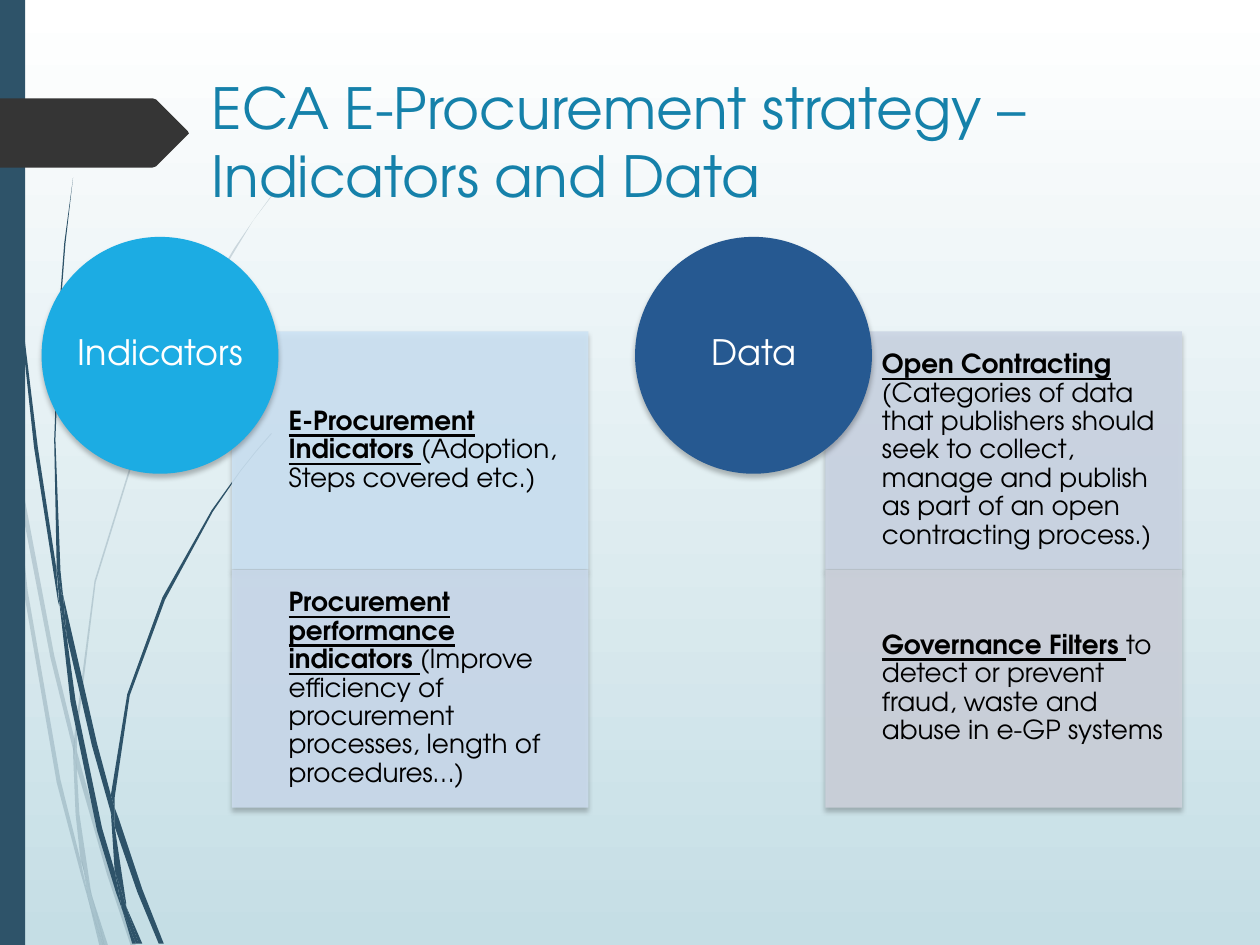
from dataclasses import dataclass

from lxml import etree
from pptx import Presentation, util as u
from pptx.dml.color import RGBColor
from pptx.enum import shapes, text
from pptx.oxml.ns import qn


@dataclass(frozen=True)
class Theme:
    """Colours, font and type sizes of the slide."""
    font: str = "TeX Gyre Adventor"
    title: str = "1581AA"
    wisp: str = "2E5369"
    tag: str = "353535"
    ink: str = "000000"
    paper: str = "FFFFFF"
    sky: str = "C5DEE5"
    title_size: float = 32.4
    topic_size: float = 20
    body_size: float = 15


PALE_WISPS = [
    [(8, 350), (6, 322), (0, 282), (0, 299), (7, 344)],
    [(40, 522), (59, 599), (59, 586), (43, 520), (10, 345), (12, 376)],
    [(64, 607), (61, 596), (61, 610), (85, 694), (104, 751), (108, 751), (88, 692)],
    [(83, 751), (86, 751), (73, 711)],
    [(64, 683), (48, 619), (22, 469), (12, 376), (8, 350), (19, 470), (45, 621),
     (64, 693), (70, 714), (69, 707)],
    [(58, 599), (60, 646), (64, 683), (67, 692), (73, 711), (72, 706), (63, 646),
     (61, 610), (61, 608)],
    [(61, 584), (76, 462), (111, 349), (159, 245), (187, 198), (201, 175), (217, 154),
     (217, 153), (201, 175), (186, 197), (158, 244), (110, 348), (75, 461), (59, 584),
     (59, 586), (61, 596)],
    [(70, 714), (79, 751), (82, 751)],
    [(61, 608), (61, 610), (61, 596), (59, 586), (58, 599)],
    [(67, 692), (65, 683), (69, 707), (70, 714), (82, 751), (83, 751), (73, 711)],
]
DARK_WISPS = [
    [(5, 110), (14, 233), (27, 355), (46, 477), (47, 481), (45, 457), (45, 453),
     (30, 355), (15, 232), (6, 109), (4, 48), (3, 0), (2, 0), (3, 48)],
    [(73, 592), (88, 645), (88, 633), (88, 631), (77, 590), (50, 472), (53, 505)],
    [(94, 649), (91, 641), (91, 656), (109, 708), (126, 749), (130, 749), (113, 706)],
    [(91, 691), (81, 657), (60, 556), (53, 505), (47, 477), (56, 557), (77, 659),
     (92, 708), (97, 722), (96, 717)],
    [(50, 472), (48, 453), (44, 349), (48, 245), (52, 193), (58, 141), (51, 193),
     (47, 245), (43, 349), (45, 449), (49, 472)],
    [(110, 749), (113, 749), (100, 719)],
    [(47, 477), (53, 505), (50, 472), (49, 472), (45, 449), (45, 453)],
    [(91, 633), (103, 552), (131, 476), (169, 406), (191, 374), (203, 359), (216, 344),
     (215, 344), (203, 358), (191, 373), (168, 405), (129, 474), (101, 551), (88, 631),
     (91, 641)],
    [(97, 722), (105, 749), (108, 749)],
    [(88, 645), (91, 691), (96, 706), (100, 719), (100, 716), (91, 656), (90, 651)],
    [(88, 645), (90, 651), (91, 656), (91, 641), (88, 631), (88, 633)],
    [(96, 706), (91, 691), (96, 717), (97, 722), (108, 749), (110, 749), (100, 719)],
]
TAG = [(0, 78), (121, 78), (124, 79), (149, 104), (150, 105.5), (149, 107), (124, 132),
       (121, 133), (0, 133)]
TOPICS = [
    ("Indicators", "1CACE3", [
        ("CDE3F4", "E-Procurement Indicators ", "(Adoption, Steps covered etc.)"),
        ("CBDBED", "Procurement performance indicators ",
         "(Improve efficiency of procurement processes, length of procedures…)"),
    ]),
    ("Data", "265991", [
        ("CCD6E5", "Open Contracting ",
         "(Categories of data that publishers should seek to collect, manage and publish "
         "as part of an open contracting process.)"),
        ("CDD2DC", "Governance Filters ",
         "to detect or prevent fraud, waste and abuse in e-GP systems"),
    ]),
]


class SlideBuilder:
    """Adds styled elements to the current slide."""

    def __init__(self, slide, theme):
        self.s, self.theme = slide, theme

    def apply(self, target, values):
        """Set each named value on the target."""
        for name, value in values.items():
            setattr(target, name, value)

    def background(self):
        """Fill the background with a vertical gradient."""
        fill = self.s.background.fill
        fill.gradient()
        fill.gradient_angle = 270
        for stop, color in zip(fill.gradient_stops, (self.theme.paper, self.theme.sky)):
            stop.color.rgb = RGBColor.from_string(color)

    def paint(self, sp, color, opacity=100, shadow=False):
        """Give a shape a plain fill, no line and an optional soft shadow."""
        sp.shadow.inherit = False
        sp.line.fill.background()
        sp.fill.solid()
        sp.fill.fore_color.rgb = RGBColor.from_string(color)
        if opacity < 100:
            clr = sp._element.spPr.find(".//" + qn("a:srgbClr"))
            etree.SubElement(clr, qn("a:alpha"), val=str(opacity * 1000))
        if shadow:
            effects = sp._element.spPr.find(qn("a:effectLst"))
            outer = etree.SubElement(effects, qn("a:outerShdw"), blurRad=str(u.Pt(3)),
                                     dist=str(u.Pt(2)), dir="5400000", rotWithShape="0")
            clr = etree.SubElement(outer, qn("a:srgbClr"), val=self.theme.ink)
            etree.SubElement(clr, qn("a:alpha"), val="25000")

    def outline(self, points, color, opacity=100):
        """Draw a closed outline from points in hundredths of an inch."""
        fb = self.s.shapes.build_freeform(*points[0], scale=u.Inches(0.01))
        fb.add_line_segments(points[1:], close=True)
        self.paint(fb.convert_to_shape(), color, opacity)

    def shape(self, kind, box, color, opacity=100, shadow=True):
        """Draw a preset shape."""
        sp = self.s.shapes.add_shape(kind, *map(u.Inches, box))
        self.paint(sp, color, opacity, shadow)

    def add_runs(self, p, runs, size, color):
        """Add runs of (text, emphasis) to a paragraph."""
        for content, strong in runs:
            r = p.add_run()
            r.text = content
            self.apply(r.font, {"name": self.theme.font, "size": u.Pt(size),
                                "bold": strong, "underline": strong})
            r.font.color.rgb = RGBColor.from_string(color)

    def label(self, box, runs, size, color, align=text.PP_ALIGN.LEFT, inset=0):
        """Add a vertically centred text box."""
        tf = self.s.shapes.add_textbox(*map(u.Inches, box)).text_frame
        gap = u.Inches(inset)
        self.apply(tf, {"word_wrap": True, "vertical_anchor": text.MSO_ANCHOR.MIDDLE,
                        "margin_left": 0, "margin_top": gap,
                        "margin_right": gap, "margin_bottom": gap})
        p = tf.paragraphs[0]
        self.apply(p, {"alignment": align, "line_spacing": 0.9})
        self.add_runs(p, runs, size, color)

    def title(self, box, content):
        """Place and fill the title placeholder."""
        sp = self.s.shapes.title
        self.apply(sp, dict(zip(("left", "top", "width", "height"), map(u.Inches, box))))
        tf = sp.text_frame
        self.apply(tf, {"word_wrap": True, "auto_size": text.MSO_AUTO_SIZE.NONE,
                        "vertical_anchor": text.MSO_ANCHOR.TOP})
        tf.paragraphs[0].alignment = text.PP_ALIGN.LEFT
        self.add_runs(tf.paragraphs[0], [(content, False)],
                      self.theme.title_size, self.theme.title)

    def topic(self, left, name, color, cells):
        """Draw a topic circle over its stack of described cells."""
        th, height = self.theme, 1.89
        for i, (fill, lead, detail) in enumerate(cells):
            top = 2.63 + i * height
            self.shape(shapes.MSO_SHAPE.RECTANGLE, (left + 1.51, top, 2.83, height), fill, 90)
            self.label((left + 1.96, top, 2.37, height), [(lead, True), (detail, False)],
                       th.body_size, th.ink, inset=0.12)
        self.shape(shapes.MSO_SHAPE.OVAL, (left, 1.88, 1.88, 1.88), color)
        self.label((left + 0.28, 2.15, 1.33, 1.33), [(name, False)],
                   th.topic_size, th.paper, text.PP_ALIGN.CENTER)


def main():
    """Build and save the slide."""
    prs = Presentation()
    prs.slide_width, prs.slide_height = u.Inches(10), u.Inches(7.5)
    th = Theme()
    b = SlideBuilder(prs.slides.add_slide(prs.slide_layouts[5]), th)
    b.background()
    for wisps, opacity in ((PALE_WISPS, 20), (DARK_WISPS, 100)):
        for points in wisps:
            b.outline(points, th.wisp, opacity)
    b.shape(shapes.MSO_SHAPE.RECTANGLE, (0, 0, 0.2, 7.5), th.wisp, shadow=False)
    b.outline(TAG, th.tag)
    b.title((1.58, 0.53, 7.31, 1.05), "ECA E-Procurement strategy – Indicators and Data")
    for i, (name, color, cells) in enumerate(TOPICS):
        b.topic(0.33 + i * 4.71, name, color, cells)
    prs.save("out.pptx")


if __name__ == "__main__":
    main()
